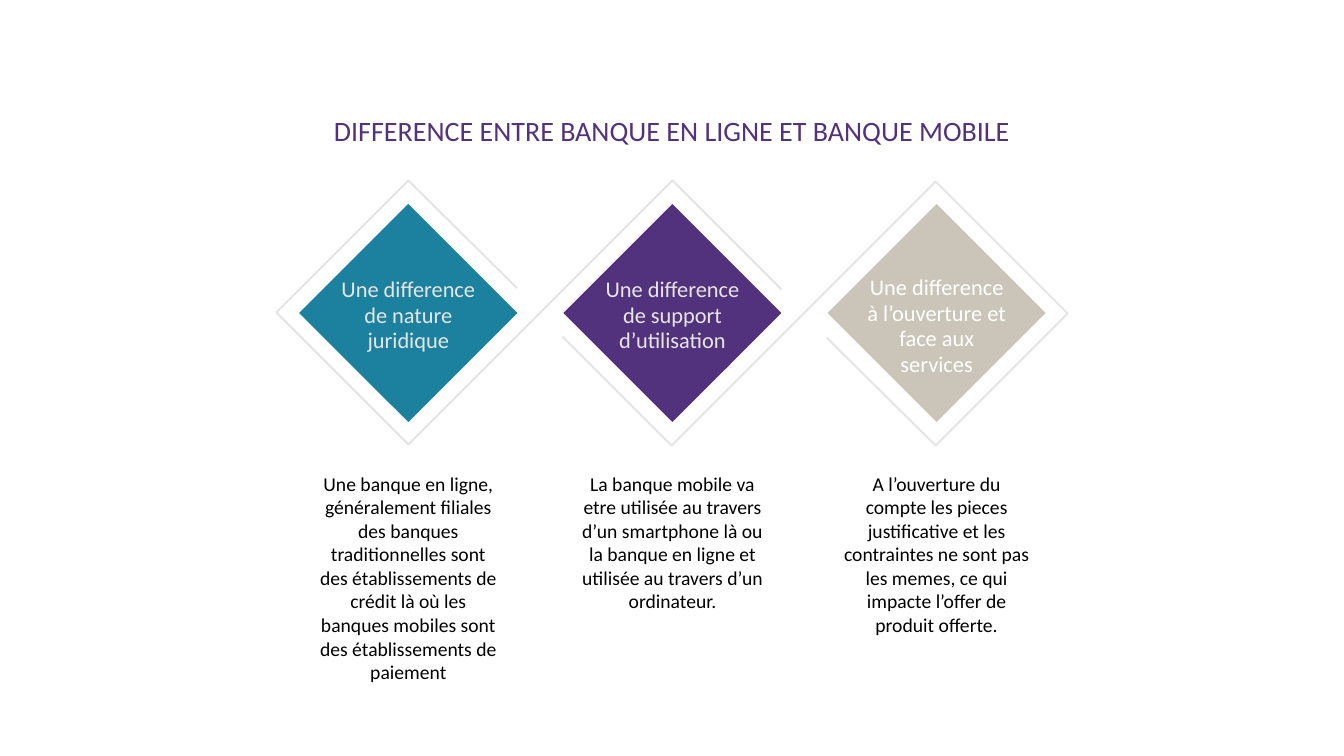
from pptx import Presentation
from pptx.dml.color import RGBColor
from pptx.enum.shapes import MSO_SHAPE
from pptx.enum.text import MSO_ANCHOR, MSO_AUTO_SIZE, PP_ALIGN
from pptx.util import Inches, Pt


def paint(color_format, value):
    color_format.rgb = RGBColor.from_string(value)


def write(box, text, size, color, inset=0, spacing=1.0, before=0, after=0):
    frame = box.text_frame
    frame.word_wrap = True
    frame.auto_size = MSO_AUTO_SIZE.NONE
    frame.vertical_anchor = MSO_ANCHOR.TOP
    frame.margin_left = frame.margin_right = Inches(inset)
    frame.margin_top = frame.margin_bottom = Inches(inset)
    para = frame.paragraphs[0]
    para.alignment = PP_ALIGN.CENTER
    para.line_spacing = spacing
    para.space_before = Pt(before)
    para.space_after = Pt(after)
    span = para.add_run()
    span.text = text
    span.font.name = "Calibri"
    span.font.size = Pt(size)
    paint(span.font.color, color)


deck = Presentation()
deck.slide_width = Inches(13.33)
deck.slide_height = Inches(7.5)
page = deck.slides.add_slide(deck.slide_layouts[5])

title = page.shapes.title
title.left, title.top = Inches(1.94), Inches(1.08)
title.width, title.height = Inches(9.45), Inches(0.39)
write(title, "DIFFERENCE ENTRE BANQUE EN LIGNE ET BANQUE MOBILE", 20, "53327D",
      inset=0.05, before=4)

columns = [
    ("1C819E", "E7E6E6", 2.75, "Une difference de nature juridique",
     "Une banque en ligne, généralement filiales des banques traditionnelles "
     "sont des établissements de crédit là où les banques mobiles sont des "
     "établissements de paiement"),
    ("53327D", "E7E6E6", 2.75, "Une difference de support d’utilisation",
     "La banque mobile va etre utilisée au travers d’un smartphone là ou la "
     "banque en ligne et utilisée au travers d’un ordinateur."),
    ("CAC5B8", "FFFFFF", 2.73,
     "Une difference à l’ouverture et face aux services",
     "A l’ouverture du compte les pieces justificative et les contraintes ne "
     "sont pas les memes, ce qui impacte l’offer de produit offerte."),
]
first_center, pitch = 4.05, 2.62
side, label_width, body_width = 1.53, 1.38, 2.09

for index, (fill, label_color, label_top, label, body) in enumerate(columns):
    center = first_center + index * pitch
    diamond = page.shapes.add_shape(
        MSO_SHAPE.RECTANGLE, Inches(center - side / 2), Inches(2.34),
        Inches(side), Inches(side))
    diamond.rotation = 315
    diamond.shadow.inherit = False
    diamond.fill.solid()
    paint(diamond.fill.fore_color, fill)
    diamond.line.fill.background()

    label_box = page.shapes.add_textbox(
        Inches(center - label_width / 2), Inches(label_top),
        Inches(label_width), Inches(0.79))
    write(label_box, label, 16, label_color, spacing=0.95, after=8)

    body_box = page.shapes.add_textbox(
        Inches(center - body_width / 2), Inches(4.56),
        Inches(body_width), Inches(1.86))
    write(body_box, body, 14, "000000", inset=0.12, before=5)

left_ribbon = [(5.13, 2.86), (4.05, 1.79), (2.74, 3.1), (4.05, 4.41),
               (6.67, 1.79), (7.75, 2.87)]
right_ribbon = [(13.33 - x, 6.21 - y) for x, y in left_ribbon]

for ribbon in (left_ribbon, right_ribbon):
    points = [(Inches(x), Inches(y)) for x, y in ribbon]
    builder = page.shapes.build_freeform(*points[0])
    builder.add_line_segments(points[1:], close=False)
    outline = builder.convert_to_shape()
    outline.shadow.inherit = False
    outline.fill.background()
    paint(outline.line.color, "E7E6E6")
    outline.line.width = Pt(1.5)

deck.save("out.pptx")
